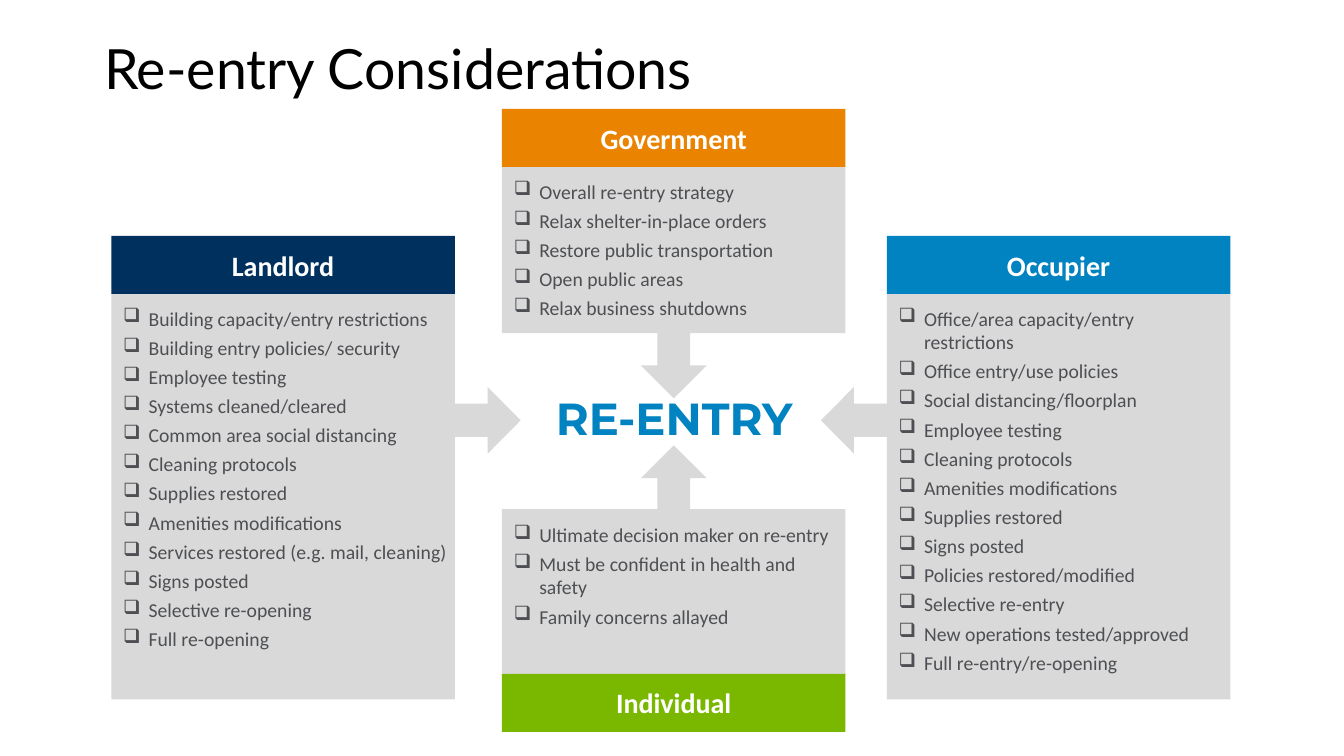
from lxml import etree
from pptx import Presentation
from pptx.dml.color import RGBColor
from pptx.enum.shapes import MSO_SHAPE
from pptx.enum.text import MSO_ANCHOR, MSO_AUTO_SIZE, PP_ALIGN
from pptx.oxml.ns import qn
from pptx.util import Inches, Pt

RECTANGLE = MSO_SHAPE.RECTANGLE
RIGHT_ARROW, LEFT_ARROW = MSO_SHAPE.RIGHT_ARROW, MSO_SHAPE.LEFT_ARROW
DOWN_ARROW, UP_ARROW = MSO_SHAPE.DOWN_ARROW, MSO_SHAPE.UP_ARROW
TOP, MIDDLE = MSO_ANCHOR.TOP, MSO_ANCHOR.MIDDLE
LEFT, CENTER = PP_ALIGN.LEFT, PP_ALIGN.CENTER
NO_AUTOFIT = MSO_AUTO_SIZE.NONE

BLACK = RGBColor(0x00, 0x00, 0x00)
WHITE = RGBColor(0xFF, 0xFF, 0xFF)
GRAY = RGBColor(0xD9, 0xD9, 0xD9)
SLATE = RGBColor(0x4D, 0x4F, 0x53)
NAVY = RGBColor(0x00, 0x30, 0x5E)
BLUE = RGBColor(0x00, 0x83, 0xC0)
ORANGE = RGBColor(0xE9, 0x83, 0x00)
GREEN = RGBColor(0x7A, 0xB8, 0x00)

GRID_COLUMNS = GRID_ROWS = 100
CARD_WIDTH = 25.56
HEADER_HEIGHT = 7.68
SIDE_TOP, SIDE_HEIGHT = 31.2, 53.76
CENTER_HEIGHT = 22.08
LANDLORD_LEFT, CENTER_LEFT, OCCUPIER_LEFT = 8.28, 37.35, 65.98
GOVERNMENT_TOP, INDIVIDUAL_TOP = 14.4, 67.36
ARROW_WIDTH, ARROW_HEIGHT = 4.9, 8.8

LANDLORD_ITEMS = [
    "Building capacity/entry restrictions",
    "Building entry policies/ security",
    "Employee testing",
    "Systems cleaned/cleared",
    "Common area social distancing",
    "Cleaning protocols",
    "Supplies restored",
    "Amenities modifications",
    "Services restored (e.g. mail, cleaning)",
    "Signs posted",
    "Selective re-opening",
    "Full re-opening",
]
OCCUPIER_ITEMS = [
    "Office/area capacity/entry restrictions",
    "Office entry/use policies",
    "Social distancing/floorplan",
    "Employee testing",
    "Cleaning protocols",
    "Amenities modifications",
    "Supplies restored",
    "Signs posted",
    "Policies restored/modified",
    "Selective re-entry",
    "New operations tested/approved",
    "Full re-entry/re-opening",
]
GOVERNMENT_ITEMS = [
    "Overall re-entry strategy",
    "Relax shelter-in-place orders",
    "Restore public transportation",
    "Open public areas",
    "Relax business shutdowns",
]
INDIVIDUAL_ITEMS = [
    "Ultimate decision maker on re-entry",
    "Must be confident in health and safety",
    "Family concerns allayed",
]


class SlideBuilder:
    body_font = "Calibri"
    title_font = "Lato"
    accent_font = "Montserrat"

    def __init__(self, presentation):
        self.column = presentation.slide_width / GRID_COLUMNS
        self.row = presentation.slide_height / GRID_ROWS
        self.slide = presentation.slides.add_slide(presentation.slide_layouts[5])

    def box(self, left, top, width, height):
        return (round(left * self.column), round(top * self.row),
                round(width * self.column), round(height * self.row))

    def format(self, paragraph, name, size, color, bold=False, alignment=CENTER):
        paragraph.alignment = alignment
        paragraph.font.name = name
        paragraph.font.size = Pt(size)
        paragraph.font.bold = bold
        paragraph.font.color.rgb = color

    def title(self, text, *area):
        title = self.slide.shapes.title
        title.left, title.top, title.width, title.height = self.box(*area)
        frame = title.text_frame
        frame.text = text
        frame.auto_size = NO_AUTOFIT
        frame.vertical_anchor = MIDDLE
        paragraph = frame.paragraphs[0]
        paragraph.line_spacing = 0.9
        self.format(paragraph, self.title_font, 33, BLACK, alignment=LEFT)

    def block(self, kind, color, *area):
        shape = self.slide.shapes.add_shape(kind, *self.box(*area))
        shape.shadow.inherit = False
        shape.fill.solid()
        shape.fill.fore_color.rgb = color
        shape.line.fill.background()
        return shape

    def header(self, text, color, left, top):
        shape = self.block(RECTANGLE, color, left, top, CARD_WIDTH, HEADER_HEIGHT)
        frame = shape.text_frame
        frame.text = text
        frame.vertical_anchor = MIDDLE
        self.format(frame.paragraphs[0], self.body_font, 16.7, WHITE, bold=True)

    def checklist(self, items, left, top, height, right_inset=0.1):
        shape = self.block(RECTANGLE, GRAY, left, top, CARD_WIDTH, height)
        frame = shape.text_frame
        frame.word_wrap = True
        frame.vertical_anchor = TOP
        frame.margin_left, frame.margin_right = Inches(0.1), Inches(right_inset)
        frame.margin_top = frame.margin_bottom = Inches(0.11)
        frame.text = "\n".join(items)
        for paragraph in frame.paragraphs:
            paragraph.space_after = Pt(3.3)
            properties = paragraph._p.get_or_add_pPr()
            properties.set("marL", str(Inches(0.21)))
            properties.set("indent", str(-Inches(0.21)))
            etree.SubElement(properties, qn("a:buChar"), char="❑")
            self.format(paragraph, self.body_font, 11.7, SLATE, alignment=LEFT)

    def arrow(self, kind, left, top):
        self.block(kind, GRAY, left, top, ARROW_WIDTH, ARROW_HEIGHT)

    def label(self, text, *area):
        frame = self.slide.shapes.add_textbox(*self.box(*area)).text_frame
        frame.word_wrap = True
        frame.text = text
        self.format(frame.paragraphs[0], self.accent_font, 26.7, BLUE, bold=True)


def main():
    presentation = Presentation()
    presentation.slide_width = Inches(11.11)
    presentation.slide_height = Inches(6.25)
    builder = SlideBuilder(presentation)
    builder.title("Re-entry Considerations", 6.84, 5.28, 86.23, 8.32)

    side_body_top = SIDE_TOP + HEADER_HEIGHT - 0.1
    builder.checklist(LANDLORD_ITEMS, LANDLORD_LEFT, side_body_top, SIDE_HEIGHT, 0)
    builder.header("Landlord", NAVY, LANDLORD_LEFT, SIDE_TOP)
    builder.checklist(OCCUPIER_ITEMS, OCCUPIER_LEFT, side_body_top, SIDE_HEIGHT)
    builder.header("Occupier", BLUE, OCCUPIER_LEFT, SIDE_TOP)

    builder.label("RE-ENTRY", 38.88, 50.88, 22.59, 8.8)
    builder.arrow(RIGHT_ARROW, LANDLORD_LEFT + CARD_WIDTH, 51.2)
    builder.arrow(LEFT_ARROW, OCCUPIER_LEFT - ARROW_WIDTH, 51.2)

    arrow_left = CENTER_LEFT + (CARD_WIDTH - ARROW_WIDTH) / 2
    government_body_top = GOVERNMENT_TOP + HEADER_HEIGHT - 0.1
    builder.checklist(GOVERNMENT_ITEMS, CENTER_LEFT, government_body_top, CENTER_HEIGHT)
    builder.header("Government", ORANGE, CENTER_LEFT, GOVERNMENT_TOP)
    builder.arrow(DOWN_ARROW, arrow_left, 43.9)
    builder.checklist(INDIVIDUAL_ITEMS, CENTER_LEFT, INDIVIDUAL_TOP, CENTER_HEIGHT)
    builder.header("Individual", GREEN, CENTER_LEFT, 89.12)
    builder.arrow(UP_ARROW, arrow_left, 58.9)

    presentation.save("out.pptx")


if __name__ == "__main__":
    main()
